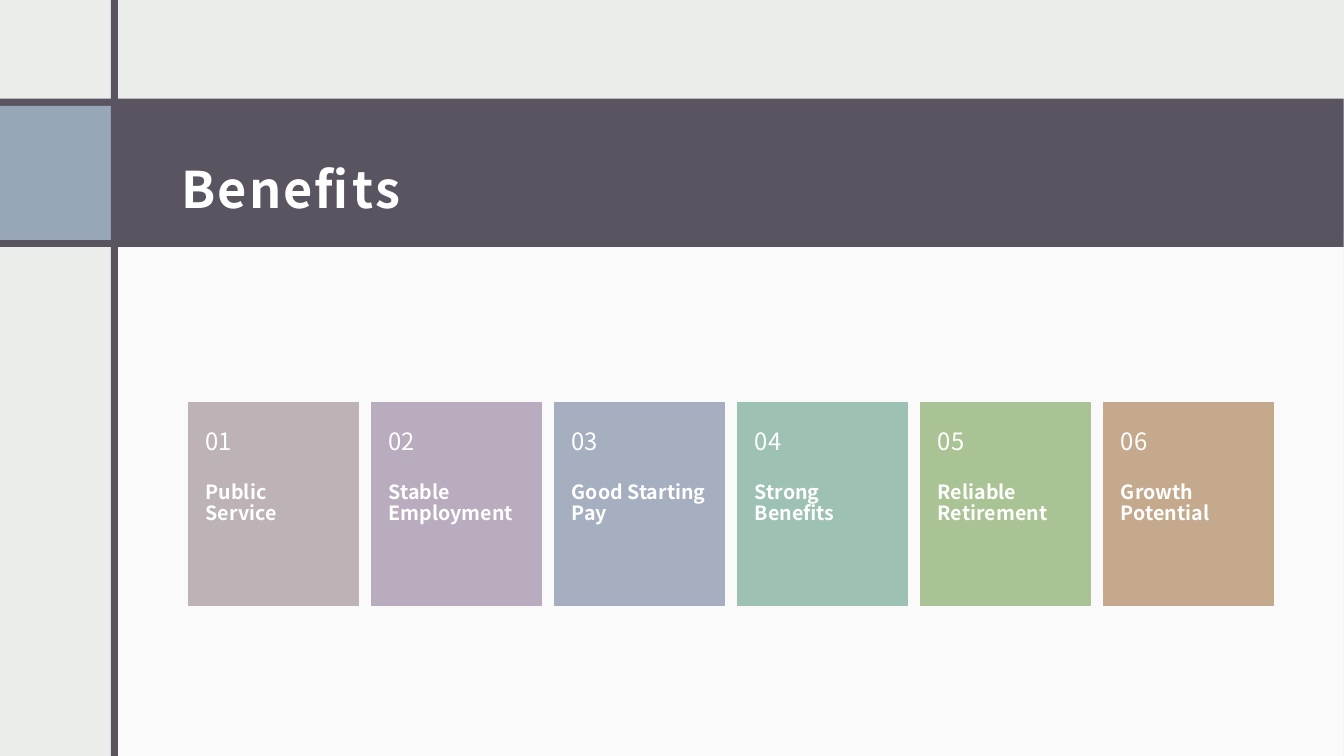
import pptx
import pptx.util
import pptx.dml.color
import pptx.enum.shapes
import pptx.enum.text
import pptx.oxml.ns
from lxml import etree

Inches = pptx.util.Inches
Pt = pptx.util.Pt
ANCHOR = pptx.enum.text.MSO_ANCHOR

COLORS = {
    "back": "EBEDEB", "white": "FFFFFF", "dark": "595460", "blue": "97A7B8",
    "rose": "BDB3B6", "mauve": "B8ACBE", "slate": "A5AFBF",
    "mint": "9DC1B2", "green": "AAC395", "tan": "C5A98D",
}
CARDS = [
    ("Public Service", "rose"), ("Stable Employment", "mauve"),
    ("Good Starting Pay", "slate"), ("Strong Benefits", "mint"),
    ("Reliable Retirement", "green"), ("Growth Potential", "tan"),
]
FACE = "Noto Sans CJK JP"
TITLE = {
    "frame": {"vertical_anchor": ANCHOR.MIDDLE},
    "pads": (0.12, 0.12, 0.12, 0.1),
    "para": {"line_spacing": 1.5},
    "font": {"name": FACE, "size": Pt(36), "bold": True},
}
NUMBER = {
    "frame": {"vertical_anchor": ANCHOR.MIDDLE},
    "pads": (0.17, 0.18, 0.17, 0.18),
    "para": {"line_spacing": 0.9},
    "font": {"name": FACE, "size": Pt(17), "bold": False},
}
LABEL = {
    "frame": {"vertical_anchor": ANCHOR.TOP},
    "pads": (0.17, 0, 0.17, 0.36),
    "para": {"line_spacing": 0.9},
    "font": {"name": FACE, "size": Pt(14), "bold": True},
}
LEFT, TOP, STEP, WIDTH = 1.87, 3.99, 1.816, 1.68


def rgb(name):
    return pptx.dml.color.RGBColor.from_string(COLORS[name])


def put(target, values):
    for key, value in values.items():
        setattr(target, key, value)


def add_box(shapes, area, color, edge=False, alpha=None):
    kind = pptx.enum.shapes.MSO_SHAPE.RECTANGLE
    box = shapes.add_shape(kind, *map(Inches, area))
    box.shadow.inherit = False
    box.fill.solid()
    box.fill.fore_color.rgb = rgb(color)
    if edge:
        box.line.color.rgb = rgb(color)
        box.line.width = Pt(1)
    else:
        box.line.fill.background()
    if alpha:
        qn = pptx.oxml.ns.qn
        tint = box.fill._xPr.find(".//" + qn("a:srgbClr"))
        etree.SubElement(tint, qn("a:alpha")).set("val", str(alpha * 1000))
    return box


def add_text(shapes, area, text, style):
    frame = shapes.add_textbox(*map(Inches, area)).text_frame
    frame.word_wrap = True
    put(frame, style["frame"])
    sides = ("left", "top", "right", "bottom")
    put(frame, {"margin_" + side: Inches(pad) for side, pad in zip(sides, style["pads"])})
    para = frame.paragraphs[0]
    put(para, style["para"])
    run = para.add_run()
    run.text = text
    put(run.font, style["font"])
    run.font.color.rgb = rgb("white")
    return run


def add_card(slide, index, text, color):
    left = LEFT + index * STEP
    shapes = slide.shapes.add_group_shape().shapes
    add_box(shapes, (left, TOP, WIDTH, 2.02), color, edge=True)
    add_text(shapes, (left, TOP + 0.8, WIDTH, 1.21), text, LABEL)
    add_text(shapes, (left, TOP, WIDTH, 0.81), f"{index + 1:02d}", NUMBER)


def main():
    deck = pptx.Presentation()
    deck.slide_width, deck.slide_height = Inches(13.333), Inches(7.5)
    slide = deck.slides.add_slide(deck.slide_layouts[6])
    slide.background.fill.solid()
    slide.background.fill.fore_color.rgb = rgb("back")
    shapes = slide.shapes
    add_box(shapes, (1.14, 2.33, 12.19, 5.17), "white", alpha=75)
    add_box(shapes, (0, 0.98, 13.33, 1.47), "dark")
    title = add_text(shapes, (1.68, 1.14, 10.95, 1.13), "Benefits", TITLE)
    title.font._rPr.set("spc", "150")
    add_box(shapes, (0, 1.05, 1.1, 1.33), "blue")
    add_box(shapes, (1.1, 0, 0.07, 7.5), "dark")
    for index, (text, color) in enumerate(CARDS):
        add_card(slide, index, text, color)
    deck.save("out.pptx")


if __name__ == "__main__":
    main()
